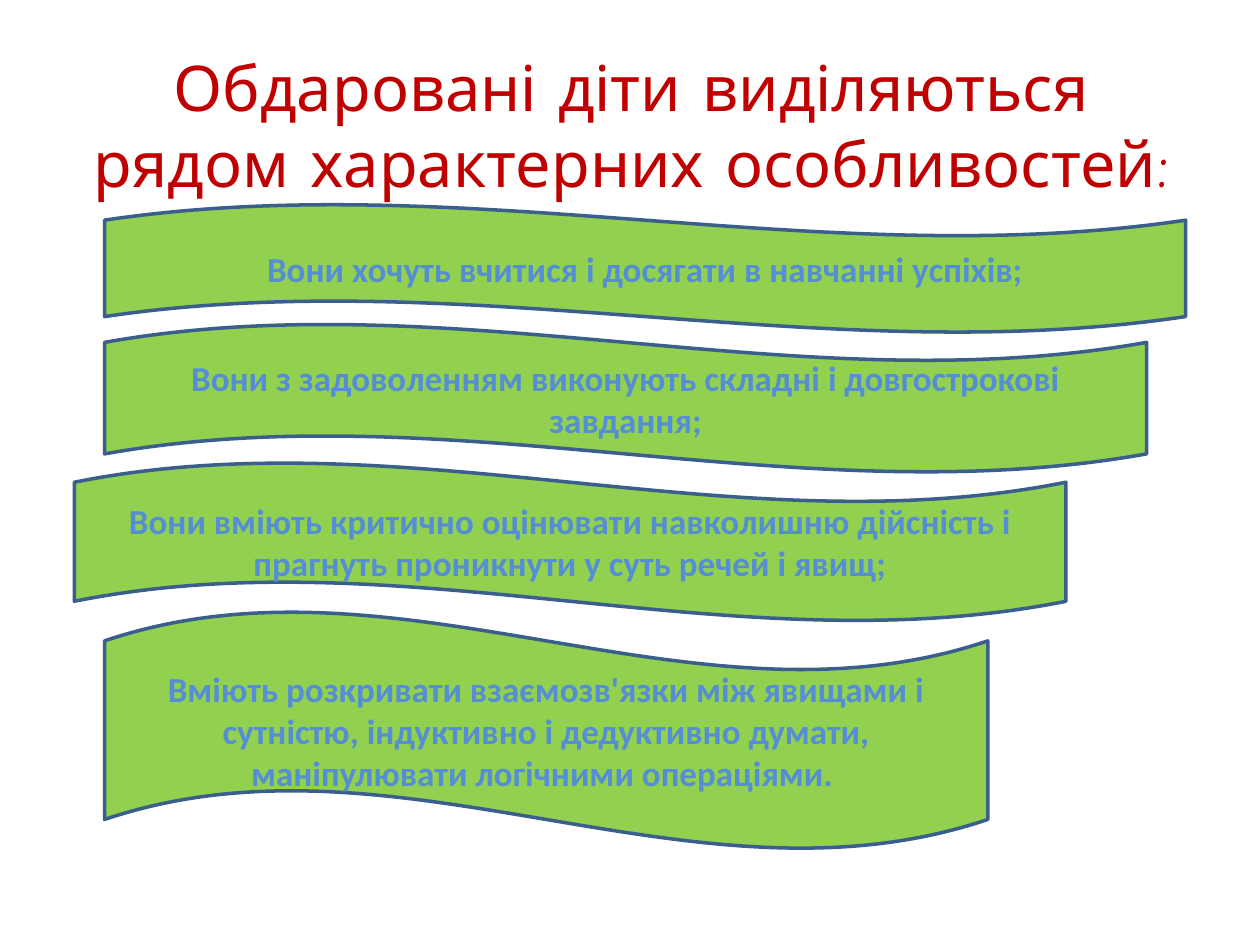
from dataclasses import dataclass

import pptx
import pptx.dml.color
import pptx.enum.shapes
import pptx.enum.text
import pptx.util
from pptx.util import Inches

COLORS = {
    "title": "C00000",
    "wave_fill": "92D050",
    "wave_line": "3A5F8C",
    "wave_text": "558ED5",
}


@dataclass
class Wave:
    left: float
    top: float
    width: float
    height: float
    text: str


WAVES = [
    Wave(0.83, 1.62, 8.58, 1.02,
         "Вони хочуть вчитися і досягати в навчанні успіхів;"),
    Wave(0.83, 2.57, 8.27, 1.18,
         "Вони з задоволенням виконують складні і довгострокові завдання;"),
    Wave(0.59, 3.67, 7.87, 1.26,
         "Вони вміють критично оцінювати навколишню дійсність і "
         "прагнуть проникнути у суть речей і явищ;"),
    Wave(0.83, 4.85, 7.01, 1.89,
         "Вміють розкривати взаємозв'язки між явищами і сутністю, індуктивно "
         "і дедуктивно думати, маніпулювати логічними операціями. "),
]


def rgb(name: str) -> pptx.dml.color.RGBColor:
    return pptx.dml.color.RGBColor.from_string(COLORS[name])


def write_text(sp, text: str, font: str, size: int, color: str, bold: bool) -> None:
    """Put one centred run into a shape."""
    tf = sp.text_frame
    tf.word_wrap = True
    tf.vertical_anchor = pptx.enum.text.MSO_ANCHOR.MIDDLE
    p = tf.paragraphs[0]
    p.alignment = pptx.enum.text.PP_ALIGN.CENTER
    r = p.add_run()
    r.text = text
    r.font.name = font
    r.font.size = pptx.util.Pt(size)
    r.font.bold = bold
    r.font.color.rgb = rgb(color)


def draw_wave(slide, wave: Wave) -> None:
    sp = slide.shapes.add_shape(
        pptx.enum.shapes.MSO_SHAPE.WAVE, Inches(wave.left), Inches(wave.top),
        Inches(wave.width), Inches(wave.height))
    sp.shadow.inherit = False
    sp.fill.solid()
    sp.fill.fore_color.rgb = rgb("wave_fill")
    sp.line.color.rgb = rgb("wave_line")
    sp.line.width = pptx.util.Pt(2)
    write_text(sp, wave.text, "Calibri", 20, "wave_text", True)


def main() -> None:
    prs = pptx.Presentation()
    prs.slide_width, prs.slide_height = Inches(10), Inches(7.5)
    slide = prs.slides.add_slide(prs.slide_layouts[6])

    # Title
    title = slide.shapes.add_textbox(
        Inches(0.51), Inches(0.36), Inches(9), Inches(1.25))
    write_text(title, "Обдаровані діти виділяються рядом характерних особливостей:",
               "Comic Neue", 36, "title", False)

    # Wavy banners
    for wave in WAVES:
        draw_wave(slide, wave)

    prs.save("out.pptx")


if __name__ == "__main__":
    main()
